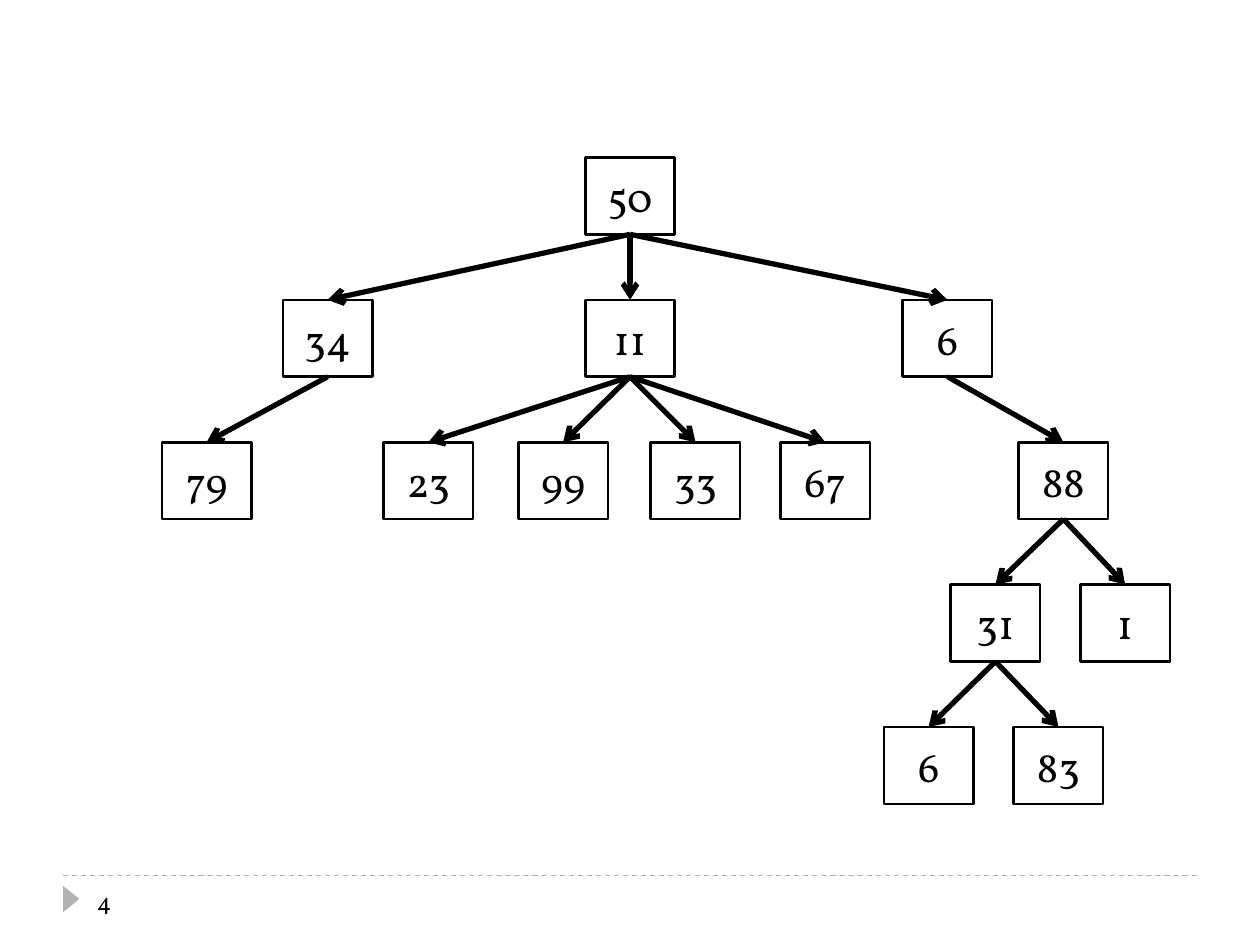
from lxml import etree
from pptx import Presentation, util as u
from pptx.dml.color import RGBColor
from pptx.enum import dml, shapes, text
from pptx.oxml.ns import qn

TREE = ("50", 5, [
    ("34", 2.6, [("79", 1.64, [])]),
    ("11", 5, [
        ("23", 3.4, []),
        ("99", 4.47, []),
        ("33", 5.52, []),
        ("67", 6.55, []),
    ]),
    ("6", 7.52, [
        ("88", 8.44, [
            ("31", 7.9, [("6", 7.37, []), ("83", 8.4, [])]),
            ("1", 8.93, []),
        ]),
    ]),
])
PAGE_NUMBER = "4"
COLORS = {"ink": "000000", "footer": "B2B2B2"}
FONT = "Vollkorn"
WIDTH, HEIGHT = 10, 7.5
MARGIN = WIDTH * 0.05
FOOTER_TOP = 6.95
BOX_WIDTH, BOX_HEIGHT = 0.71, 0.61
FIRST_ROW, ROW_STEP = 1.25, 1.13


def color(name):
    return RGBColor.from_string(COLORS[name])


def write(shape, content, size, alignment):
    frame = shape.text_frame
    frame.word_wrap = True
    frame.vertical_anchor = text.MSO_ANCHOR.MIDDLE
    paragraph = frame.paragraphs[0]
    paragraph.alignment = alignment
    run = paragraph.add_run()
    run.text = content
    run.font.name = FONT
    run.font.size = u.Pt(size)
    run.font.color.rgb = color("ink")


def add_line(slide, start, end, name, width):
    points = [u.Inches(value) for value in (*start, *end)]
    line = slide.shapes.add_connector(shapes.MSO_CONNECTOR.STRAIGHT, *points)
    line.line.color.rgb = color(name)
    line.line.width = u.Pt(width)
    etree.SubElement(line._element.spPr, qn("a:effectLst"))
    return line


def add_arrow(slide, start, end):
    arrow = add_line(slide, start, end, "ink", 3)
    etree.SubElement(arrow.line._get_or_add_ln(), qn("a:tailEnd"), type="arrow")


def add_shape(slide, kind, left, top, width, height):
    frame = [u.Inches(value) for value in (left, top, width, height)]
    shape = slide.shapes.add_shape(kind, *frame)
    shape.shadow.inherit = False
    return shape


def add_footer(slide):
    rule = add_line(slide, (MARGIN, FOOTER_TOP), (WIDTH - MARGIN, FOOTER_TOP), "footer", 0.75)
    rule.line.dash_style = dml.MSO_LINE.DASH
    marker = add_shape(slide, shapes.MSO_SHAPE.ISOSCELES_TRIANGLE, 0.46, 7.07, 0.21, 0.13)
    marker.rotation = 90
    marker.fill.solid()
    marker.fill.fore_color.rgb = color("footer")
    marker.line.fill.background()
    frame = [u.Inches(value) for value in (0.67, FOOTER_TOP, 2.17, 0.4)]
    write(slide.shapes.add_textbox(*frame), PAGE_NUMBER, 14, text.PP_ALIGN.LEFT)


def row_top(level):
    return FIRST_ROW + level * ROW_STEP


def add_boxes(slide, node, level=0):
    label, center, children = node
    box = add_shape(slide, shapes.MSO_SHAPE.RECTANGLE,
                    center - BOX_WIDTH / 2, row_top(level), BOX_WIDTH, BOX_HEIGHT)
    box.fill.background()
    box.line.color.rgb = color("ink")
    box.line.width = u.Pt(1.5)
    write(box, label, 24, text.PP_ALIGN.CENTER)
    for child in children:
        add_boxes(slide, child, level + 1)


def add_arrows(slide, node, level=0):
    _, center, children = node
    for child in children:
        add_arrow(slide, (center, row_top(level) + BOX_HEIGHT), (child[1], row_top(level + 1)))
        add_arrows(slide, child, level + 1)


def main():
    presentation = Presentation()
    presentation.slide_width = u.Inches(WIDTH)
    presentation.slide_height = u.Inches(HEIGHT)
    slide = presentation.slides.add_slide(presentation.slide_layouts[6])
    add_footer(slide)
    add_boxes(slide, TREE)
    add_arrows(slide, TREE)
    presentation.save("out.pptx")


if __name__ == "__main__":
    main()
